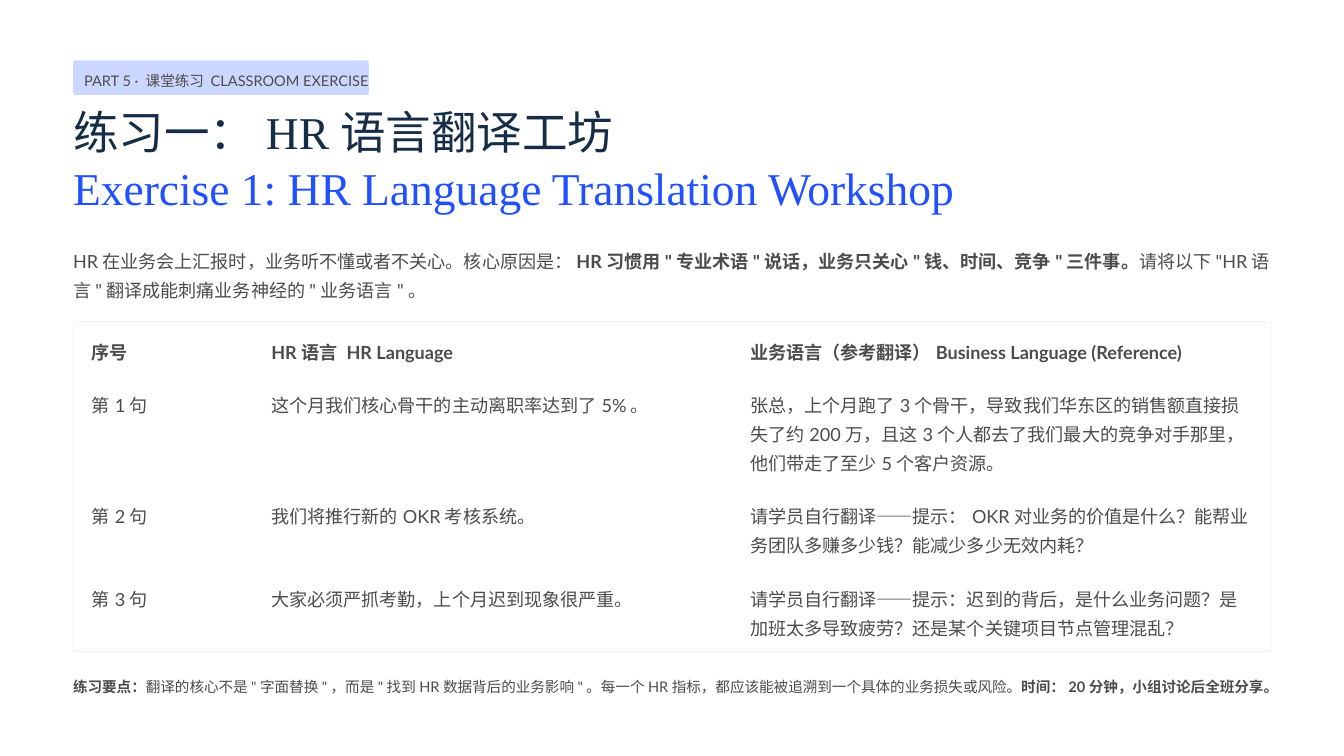
from lxml.etree import SubElement as Sub
from pptx import Presentation
from pptx.dml.color import RGBColor as Rgb
from pptx.enum.shapes import MSO_SHAPE as Kind
from pptx.oxml.ns import qn
from pptx.util import Inches, Pt

HUES = {"paper": "FFFFFF", "tag": "CCD7FF", "text": "4C4C4D",
        "navy": "152D47", "blue": "2150FE", "edge": "000000"}
BODY = {"size": Pt(15.5), "name": "Lato", "bold": False}
BOLD = {**BODY, "bold": True}
NOTE = {**BODY, "size": Pt(12.5)}
KEY = {**NOTE, "bold": True}
HEAD = {**BODY, "size": Pt(39), "name": "Times New Roman"}
LEFT, WIDE = 0.87, 14.26
COLS = [2.14, 5.7, 6.42]
ROWS = [0.63, 1.33, 0.98, 0.99]
PAD = {"margin_left": Inches(0.22), "margin_right": Inches(0.22),
       "margin_top": Inches(0.16), "margin_bottom": Inches(0.1)}
BARE = {"margin_left": 0, "margin_right": 0, "margin_top": 0, "margin_bottom": 0}
CELLS = [
    ["序号", "HR语言 HR Language", "业务语言（参考翻译）Business Language (Reference)"],
    ["第1句", "这个月我们核心骨干的主动离职率达到了5%。",
     "张总，上个月跑了3个骨干，导致我们华东区的销售额直接损失了约200万，且这3个人都去了我们最大的竞争对手那里，他们带走了至少5个客户资源。"],
    ["第2句", "我们将推行新的OKR考核系统。",
     "请学员自行翻译——提示：OKR对业务的价值是什么？能帮业务团队多赚多少钱？能减少多少无效内耗？"],
    ["第3句", "大家必须严抓考勤，上个月迟到现象很严重。",
     "请学员自行翻译——提示：迟到的背后，是什么业务问题？是加班太多导致疲劳？还是某个关键项目节点管理混乱？"],
]


def tint(name):
    return Rgb.from_string(HUES[name])


def apply(thing, looks):
    for key, value in looks.items():
        setattr(thing, key, value)


def write(para, runs, lead, hue="text"):
    para.line_spacing = Pt(lead)
    for words, looks in runs:
        run = para.add_run()
        run.text = words
        apply(run.font, looks)
        run.font.color.rgb = tint(hue)


def label(slide, box, lines, lead, wrap=True):
    frame = slide.shapes.add_textbox(*map(Inches, box)).text_frame
    apply(frame, {**BARE, "word_wrap": wrap})
    for i, (runs, hue) in enumerate(lines):
        para = frame.add_paragraph() if i else frame.paragraphs[0]
        write(para, runs, lead, hue)


def panel(slide, box, bend):
    shape = slide.shapes.add_shape(Kind.ROUNDED_RECTANGLE, *map(Inches, box))
    shape.adjustments[0] = bend
    shape.shadow.inherit = False
    return shape


def tag(slide, box):
    x, y, w, h = box
    plate = panel(slide, box, 0.064)
    plate.fill.solid()
    plate.fill.fore_color.rgb = tint("tag")
    plate.line.fill.background()
    words = "PART 5 · 课堂练习 CLASSROOM EXERCISE"
    label(slide, (x + 0.13, y + 0.07, w, h - 0.13),
          [([(words, NOTE)], "text")], 20)


def title(slide, box):
    label(slide, box, [
        ([("练习一：HR语言翻译工坊", HEAD)], "navy"),
        ([("Exercise 1: HR Language Translation Workshop", HEAD)], "blue"),
    ], 48.5)


def intro(slide, box):
    label(slide, box, [([
        ("HR在业务会上汇报时，业务听不懂或者不关心。核心原因是：", BODY),
        ('HR习惯用"专业术语"说话，业务只关心"钱、时间、竞争"三件事。', BOLD),
        ('请将以下"HR语言"翻译成能刺痛业务神经的"业务语言"。', BODY),
    ], "text")], 25)


def grid(slide, box):
    size = len(ROWS), len(COLS)
    table = slide.shapes.add_table(*size, *map(Inches, box)).table
    apply(table, {"first_row": False, "horz_banding": False})
    for col, width in zip(table.columns, COLS):
        col.width = Inches(width)
    for i, (row, height) in enumerate(zip(table.rows, ROWS)):
        row.height = Inches(height)
        for cell, words in zip(row.cells, CELLS[i]):
            apply(cell, PAD)
            cell.fill.background()
            looks = BODY if i else BOLD
            write(cell.text_frame.paragraphs[0], [(words, looks)], 25)

    edge = panel(slide, box, 0.008)
    edge.fill.background()
    edge.line.color.rgb = tint("edge")
    edge.line.width = Pt(0.6)
    color = next(edge.line._ln.iter(qn("a:srgbClr")))
    Sub(color, qn("a:alpha"), val="8000")


def foot(slide, box):
    label(slide, box, [([
        ("练习要点：", KEY),
        ('翻译的核心不是"字面替换"，而是"找到HR数据背后的业务影响"。每一个HR指标，都应该能被追溯到一个具体的业务损失或风险。', NOTE),
        ("时间：20分钟，小组讨论后全班分享。", KEY),
    ], "text")], 20, False)


def main():
    deck = Presentation()
    apply(deck, {"slide_width": Inches(16), "slide_height": Inches(9)})
    slide = deck.slides.add_slide(deck.slide_layouts[6])
    slide.background.fill.solid()
    slide.background.fill.fore_color.rgb = tint("paper")
    tag(slide, (LEFT, 0.72, 3.52, 0.41))
    title(slide, (LEFT, 1.21, 10.52, 1.36))
    intro(slide, (LEFT, 2.89, WIDE, 0.69))
    grid(slide, (LEFT, 3.83, WIDE, sum(ROWS)))
    foot(slide, (LEFT, 8, WIDE, 0.28))
    deck.save("out.pptx")


if __name__ == "__main__":
    main()
